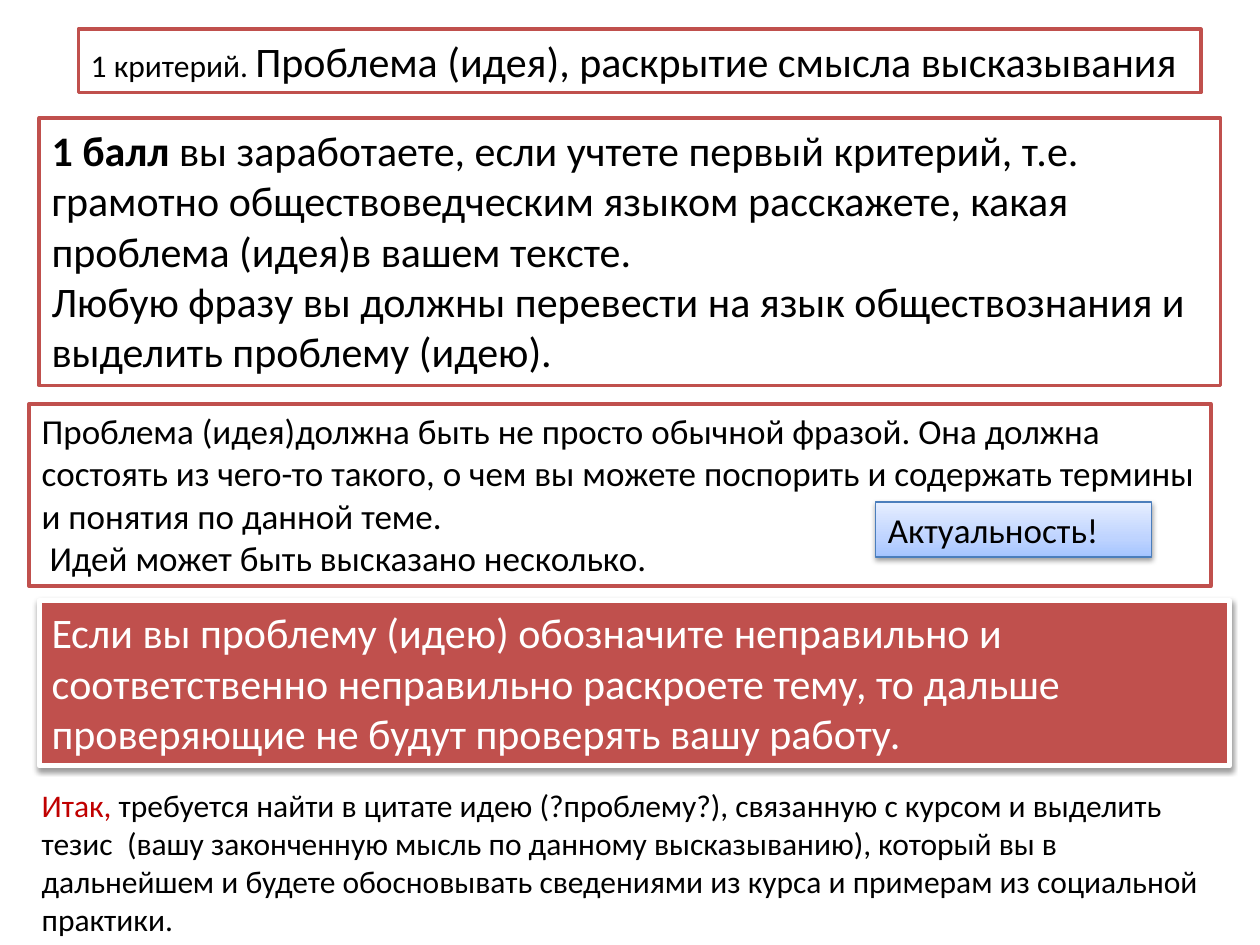
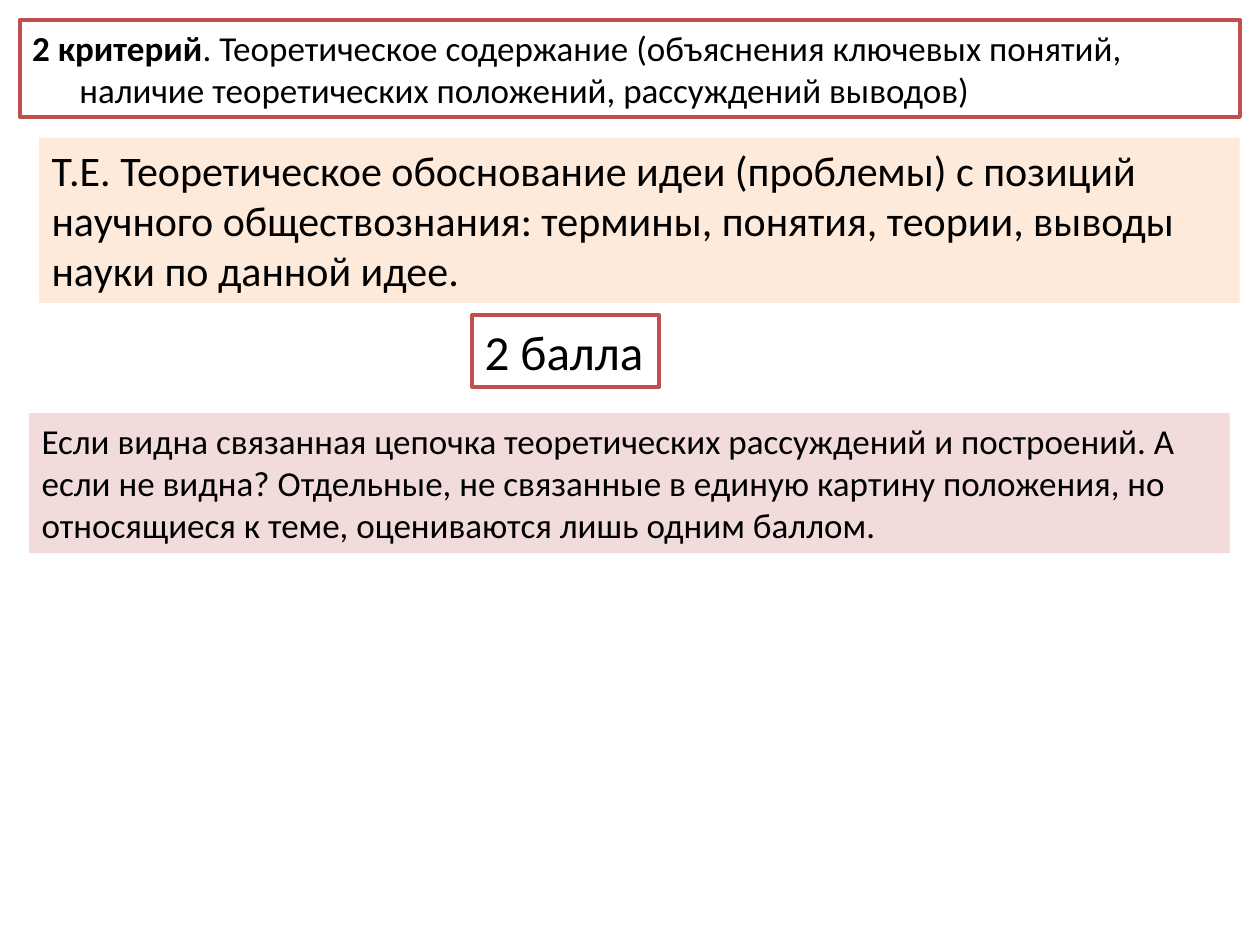
"""Build two slides on the essay criteria: the problem and the theory."""
from copy import deepcopy
from dataclasses import dataclass

from lxml import etree
from pptx import Presentation
from pptx import util as u
from pptx.dml.color import RGBColor
from pptx.enum import shapes, text
from pptx.oxml.ns import qn


@dataclass(frozen=True)
class Theme:
    """Colours, font and type sizes shared by the slides."""
    font: str = "Calibri"
    ink: str = "000000"
    paper: str = "FFFFFF"
    red: str = "C0504D"
    accent: str = "C00000"
    peach: str = "FDEADA"
    rose: str = "F2DCDB"
    blue_line: str = "4B7EBC"
    blues: tuple = ((0, "A4C4FF"), (0.35, "BFD4FF"), (1, "E6EEFF"))
    small: int = 18
    body: int = 20
    large: int = 24
    score: int = 28
    hanging: float = 0.95


THEME = Theme()


def rgb(colour):
    """Turn a hex string into a colour."""
    return RGBColor.from_string(colour)


def add_run(paragraph, words, *, size=THEME.body, colour=THEME.ink, bold=False):
    """Append formatted text to a paragraph."""
    run = paragraph.add_run()
    run.text = words
    run.font.name = THEME.font
    run.font.size = u.Pt(size)
    run.font.bold = bold
    run.font.color.rgb = rgb(colour)


def write(shape, paragraphs, *, hanging=False, wrap=True, **style):
    """Fill a shape with paragraphs, each a list of (words, own format) runs."""
    frame = shape.text_frame
    frame.word_wrap = wrap
    frame.auto_size = text.MSO_AUTO_SIZE.SHAPE_TO_FIT_TEXT
    frame.vertical_anchor = text.MSO_ANCHOR.TOP
    for index, runs in enumerate(paragraphs):
        paragraph = frame.add_paragraph() if index else frame.paragraphs[0]
        paragraph.alignment = text.PP_ALIGN.LEFT
        if hanging:
            properties = paragraph._p.get_or_add_pPr()
            properties.set("marL", str(u.Cm(THEME.hanging)))
            properties.set("indent", str(-u.Cm(THEME.hanging)))
        for words, own in runs:
            add_run(paragraph, words, **{**style, **own})


def add_shadow(shape):
    """Give a shape a soft shadow below it."""
    effects = shape._element.spPr.find(qn("a:effectLst"))
    shadow = etree.SubElement(effects, qn("a:outerShdw"), blurRad=str(u.Pt(3.1)),
                              dist=str(u.Pt(1.6)), dir="5400000", rotWithShape="0")
    colour = etree.SubElement(shadow, qn("a:srgbClr"), val=THEME.ink)
    etree.SubElement(colour, qn("a:alpha"), val="38000")


def fill_gradient(shape, stops):
    """Fill a shape with a three-stop gradient that runs upwards."""
    shape.fill.gradient()
    shape.fill.gradient_angle = 90
    first = shape._element.spPr.find(".//" + qn("a:gs"))
    first.addnext(deepcopy(first))
    for stop, (position, colour) in zip(shape.fill.gradient_stops, stops):
        stop.position = position
        stop.color.rgb = rgb(colour)


def add_box(slide, place, paragraphs, *, fill=THEME.paper, line=None,
            line_width=2, shadow=False, **style):
    """Add a filled text panel; place is left, top, width, height in cm."""
    box = slide.shapes.add_shape(shapes.MSO_SHAPE.RECTANGLE, *map(u.Cm, place))
    box.shadow.inherit = False
    if isinstance(fill, tuple):
        fill_gradient(box, fill)
    else:
        box.fill.solid()
        box.fill.fore_color.rgb = rgb(fill)
    if line:
        box.line.color.rgb = rgb(line)
        box.line.width = u.Pt(line_width)
    else:
        box.line.fill.background()
    if shadow:
        add_shadow(box)
    write(box, paragraphs, **style)


def add_framed_box(slide, place, paragraphs, **style):
    """Add a white panel with the red frame."""
    add_box(slide, place, paragraphs, line=THEME.red, **style)


def add_note(slide, place, paragraphs, **style):
    """Add plain text without a panel."""
    write(slide.shapes.add_textbox(*map(u.Cm, place)), paragraphs, **style)


def build_problem_slide(slide):
    """Draw the first criterion."""
    add_framed_box(slide, (0.79, 2.38, 23.82, 5.39), [
        [("1 балл ", {"bold": True}),
         ("вы заработаете, если учтете первый критерий, т.е. грамотно "
          "обществоведческим языком расскажете, какая проблема (идея)в вашем тексте.", {})],
        [("Любую фразу вы должны перевести на язык обществознания и выделить "
          "проблему (идею).", {})],
    ], size=THEME.large)
    add_framed_box(slide, (0.59, 8.14, 23.82, 3.68), [
        [("Проблема (идея)должна быть не просто обычной фразой. Она должна состоять "
          "из чего-то такого, о чем вы можете поспорить и содержать термины и понятия "
          "по данной теме.", {})],
        [(" Идей может быть высказано несколько.", {})],
    ])
    add_box(slide, (0.79, 12.11, 24, 3.33), [
        [("Если вы проблему (идею) обозначите неправильно и соответственно неправильно "
          "раскроете тему, то дальше проверяющие не будут проверять вашу работу.", {})],
    ], fill=THEME.red, line=THEME.paper, line_width=3, shadow=True,
        size=THEME.large, colour=THEME.paper)
    add_framed_box(slide, (1.58, 0.59, 22.63, 1.28), [
        [("1 критерий. ", {"size": THEME.small}),
         ("Проблема (идея), раскрытие смысла высказывания", {})],
    ], size=THEME.large, hanging=True, wrap=False)
    add_note(slide, (0.59, 15.73, 24.2, 3.33), [
        [("Итак, ", {"colour": THEME.accent}),
         ("требуется найти в цитате идею (?проблему?), связанную с курсом и выделить "
          "тезис  (вашу законченную мысль по данному высказыванию), который вы в "
          "дальнейшем и будете обосновывать сведениями из курса и примерам из "
          "социальной практики.", {})],
    ], size=THEME.small)
    add_box(slide, (17.65, 10.12, 5.56, 1.11), [[("Актуальность!", {})]],
            fill=THEME.blues, line=THEME.blue_line, line_width=0.75, shadow=True)


def build_theory_slide(slide):
    """Draw the second criterion."""
    add_framed_box(slide, (0.4, 0.4, 24.6, 1.96), [
        [("2 критерий", {"bold": True}),
         (". Теоретическое содержание (объяснения ключевых понятий, наличие "
          "теоретических положений, рассуждений выводов)", {})],
    ], hanging=True)
    add_framed_box(slide, (9.52, 6.35, 3.77, 1.45), [[("2 балла", {})]],
                   size=THEME.score)
    add_box(slide, (0.79, 2.78, 24.2, 3.33), [
        [("Т.Е. Теоретическое обоснование идеи (проблемы) с позиций научного "
          "обществознания: термины, понятия, теории, выводы науки по данной идее.", {})],
    ], fill=THEME.peach, size=THEME.large)
    add_box(slide, (0.59, 8.33, 24.2, 2.82), [
        [("Если видна связанная цепочка теоретических рассуждений и построений. А если "
          "не видна? Отдельные, не связанные в единую картину положения, но относящиеся "
          "к теме, оцениваются лишь одним баллом.", {})],
    ], fill=THEME.rose)


def main():
    """Build the presentation and save it."""
    presentation = Presentation()
    presentation.slide_width = u.Cm(25.4)
    presentation.slide_height = u.Cm(19.05)
    blank = presentation.slide_layouts[6]
    for build in (build_problem_slide, build_theory_slide):
        build(presentation.slides.add_slide(blank))
    presentation.save("out.pptx")


if __name__ == "__main__":
    main()
